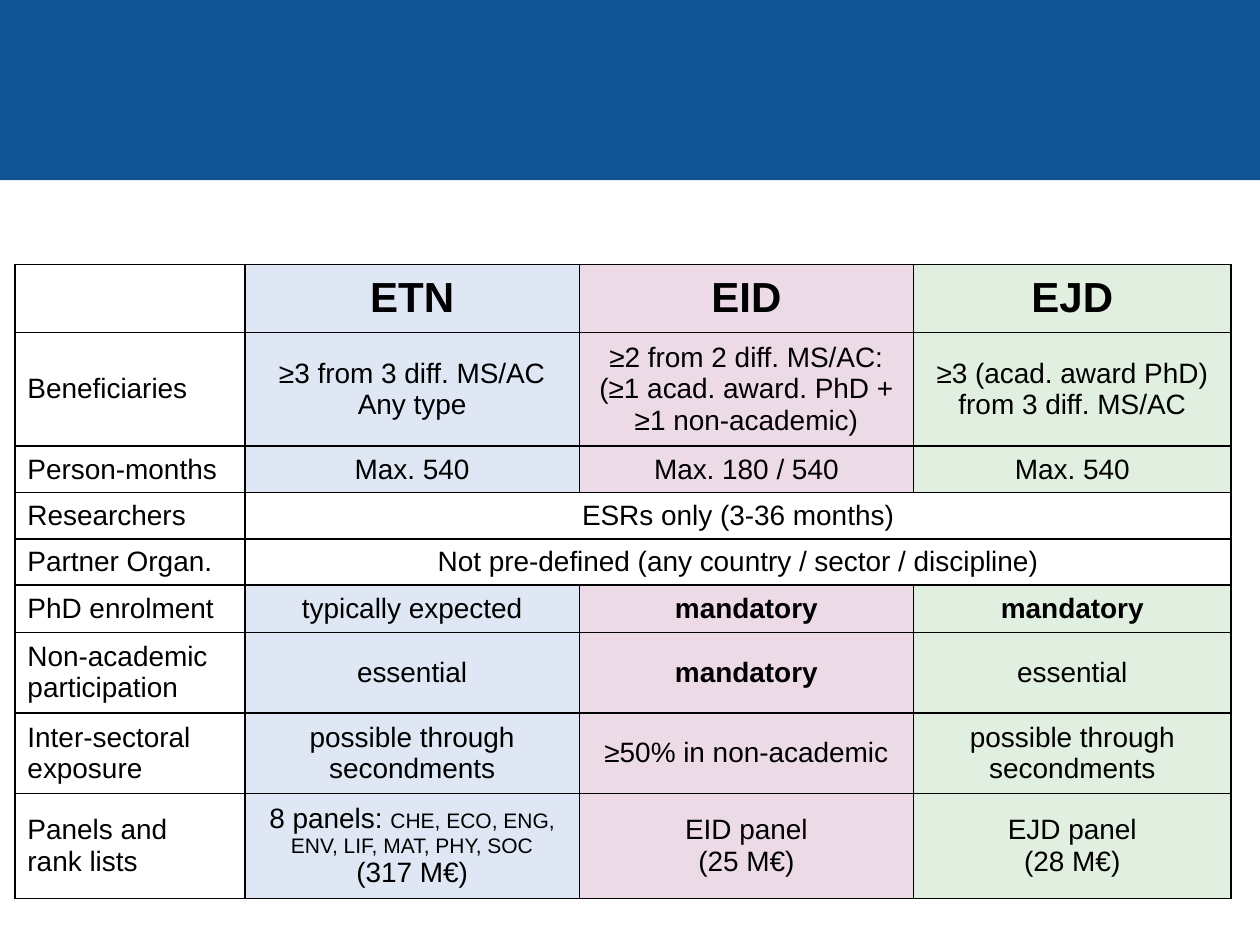
from pptx import Presentation
from pptx.dml.color import RGBColor
from pptx.enum.shapes import MSO_SHAPE
from pptx.enum.text import MSO_ANCHOR, PP_ALIGN
from pptx.oxml.ns import qn
from pptx.util import Pt
from lxml import etree

RECT = MSO_SHAPE.RECTANGLE
MIDDLE = MSO_ANCHOR.MIDDLE
LEFT, CENTER = PP_ALIGN.LEFT, PP_ALIGN.CENTER

BLACK = "000000"
TINTS = [None, "2D5EC1", "84095B", "339933"]
COLS = [131.5, 191, 191, 181.5]
ROWS = [39, 65, 26.5, 26.5, 26.5, 27, 46, 46, 60]
PANELS = [("8 panels: ", 16), ("CHE, ECO, ENG, ENV, LIF, MAT, PHY, SOC", 12),
          ("\v", 16), ("(317 M€)", 16)]
GRID = [
    ["", "ETN", "EID", "EJD"],
    ["Beneficiaries", "≥3 from 3 diff. MS/AC\vAny type",
     "≥2 from 2 diff. MS/AC:\n(≥1 acad. award. PhD +\v≥1 non-academic)",
     "≥3 (acad. award PhD) from 3 diff. MS/AC"],
    ["Person-months", "Max. 540", "Max. 180 / 540", "Max. 540"],
    ["Researchers", "ESRs only (3-36 months)"],
    ["Partner Organ.", "Not pre-defined (any country / sector / discipline)"],
    ["PhD enrolment", "typically expected", "mandatory", "mandatory"],
    ["Non-academic participation", "essential", "mandatory", "essential"],
    ["Inter-sectoral exposure", "possible through secondments",
     "≥50% in non-academic", "possible through secondments"],
    ["Panels and\vrank lists", PANELS, "EID panel\v(25 M€)", "EJD panel\v(28 M€)"],
]


def color(code):
    return RGBColor.from_string(code)


class Deck:
    font = "Arial"
    size = 16
    head = 24
    alpha = 15

    def __init__(self, wide, high):
        self.prs = Presentation()
        self.prs.slide_width, self.prs.slide_height = Pt(wide), Pt(high)
        self.slide = self.prs.slides.add_slide(self.prs.slide_layouts[6])

    def bar(self, left, top, wide, high, code):
        shape = self.slide.shapes.add_shape(RECT, Pt(left), Pt(top), Pt(wide), Pt(high))
        shape.shadow.inherit = False
        shape.fill.solid()
        shape.fill.fore_color.rgb = color(code)
        shape.line.fill.background()

    def table(self, left, top, cols, rows, grid):
        frame = self.slide.shapes.add_table(
            len(rows), len(cols), Pt(left), Pt(top), Pt(sum(cols)), Pt(sum(rows)))
        table = frame.table
        table.first_row = table.horz_banding = False
        for col, wide in zip(table.columns, cols):
            col.width = Pt(wide)
        for y, (row, high, texts) in enumerate(zip(table.rows, rows, grid)):
            row.height = Pt(high)
            merged = len(texts) < len(cols)
            for x, cell in enumerate(row.cells):
                self.border(cell)
                self.tint(cell, None if merged else TINTS[x])
            if merged:
                table.cell(y, 1).merge(table.cell(y, len(cols) - 1))
            for x, text in enumerate(texts):
                self.label(table.cell(y, x), text, CENTER if x else LEFT, y == 0)

    def border(self, cell):
        props = cell._tc.get_or_add_tcPr()
        for side in ("a:lnL", "a:lnR", "a:lnT", "a:lnB"):
            line = etree.SubElement(props, qn(side), w=str(Pt(1)))
            fill = etree.SubElement(line, qn("a:solidFill"))
            etree.SubElement(fill, qn("a:srgbClr"), val=BLACK)

    def tint(self, cell, code):
        if not code:
            cell.fill.background()
            return
        cell.fill.solid()
        cell.fill.fore_color.rgb = color(code)
        tone = cell._tc.tcPr.find(qn("a:solidFill")).find(qn("a:srgbClr"))
        etree.SubElement(tone, qn("a:alpha"), val=str(self.alpha * 1000))

    def label(self, cell, text, align, head):
        cell.vertical_anchor = MIDDLE
        frame = cell.text_frame
        if isinstance(text, str):
            frame.text = text
        else:
            self.mix(frame.paragraphs[0], text)
        for para in frame.paragraphs:
            para.alignment = align
            for run in para.runs:
                font = run.font
                font.name = self.font
                font.size = font.size or Pt(self.head if head else self.size)
                font.bold = head or text == "mandatory"
                font.color.rgb = color(BLACK)

    def mix(self, para, parts):
        for text, size in parts:
            if text == "\v":
                para.add_line_break()
                continue
            run = para.add_run()
            run.text = text
            run.font.size = Pt(size)


def main():
    deck = Deck(720, 540)
    deck.bar(0, -3, 720, 106, "0F5494")
    deck.table(8.5, 151, COLS, ROWS, GRID)
    deck.prs.save("out.pptx")


if __name__ == "__main__":
    main()
